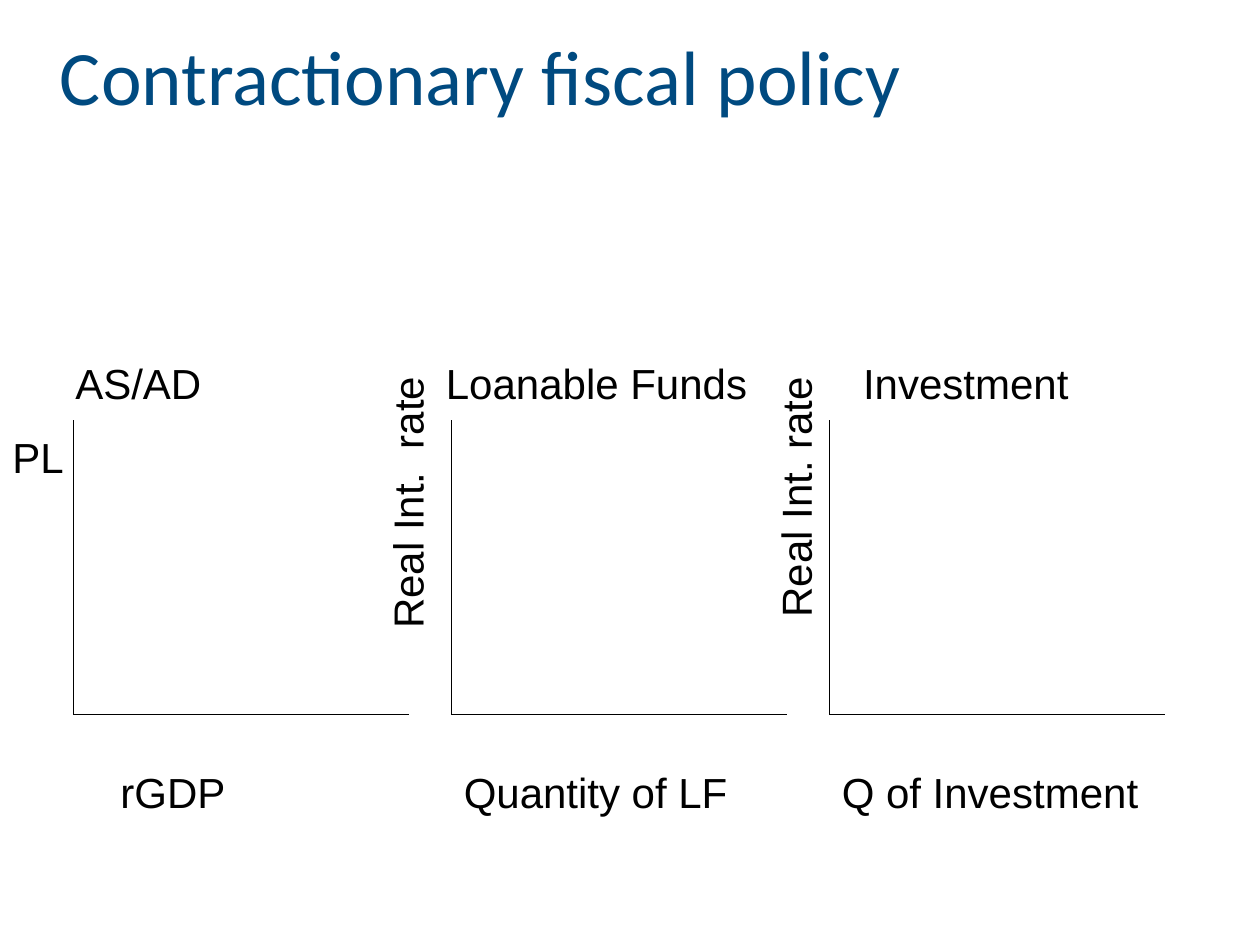
"""Build the contractionary fiscal policy slide with three empty graphs."""
from lxml import etree
from pptx import Presentation
from pptx import util as u
from pptx.dml.color import RGBColor
from pptx.enum import shapes, text
from pptx.oxml import ns

BLUE = RGBColor(0x00, 0x4A, 0x80)
BLACK = RGBColor(0x00, 0x00, 0x00)

prs = Presentation()
prs.slide_width, prs.slide_height = u.Cm(25.4), u.Cm(19.05)
s = prs.slides.add_slide(prs.slide_layouts[6])


def add_label(words, left, top, width, height, tabs=(), rotation=0, inset=0.25,
              name="Arial", size=24, color=BLACK):
    sp = s.shapes.add_textbox(u.Cm(left), u.Cm(top), u.Cm(width), u.Cm(height))
    sp.rotation = rotation
    tf = sp.text_frame
    frame = {"word_wrap": True, "vertical_anchor": text.MSO_ANCHOR.TOP,
             "margin_left": u.Cm(inset), "margin_top": u.Cm(0.22)}
    for key, value in frame.items():
        setattr(tf, key, value)
    p = tf.paragraphs[0]
    r = p.add_run()
    r.text = words
    for key, value in {"name": name, "size": u.Pt(size)}.items():
        setattr(r.font, key, value)
    r.font.color.rgb = color
    if tabs:
        stops = etree.SubElement(p._p.get_or_add_pPr(), ns.qn("a:tabLst"))
        for tab in tabs:
            etree.SubElement(stops, ns.qn("a:tab"), pos=str(u.Cm(tab)), algn="l")


def add_axis(x1, y1, x2, y2):
    sp = s.shapes.add_connector(shapes.MSO_CONNECTOR.STRAIGHT,
                                u.Cm(x1), u.Cm(y1), u.Cm(x2), u.Cm(y2))
    sp.line.color.rgb = BLACK
    sp.line.width = u.Pt(0.75)
    etree.SubElement(sp._element.spPr, ns.qn("a:effectLst"))


add_label("Contractionary fiscal policy", 1.06, 0.36, 22.86, 2.13,
          inset=0.15, name="Calibri", size=44, color=BLUE)

top, bottom, axis_width = 8.47, 14.4, 6.77
for i in range(3):
    left = 1.48 + i * 7.62
    add_axis(left, top, left, bottom)
    add_axis(left, bottom, left + axis_width, bottom)

add_label("AS/AD\tLoanable Funds\tInvestment", 1.27, 6.99, 23.28, 1.3,
          tabs=(7.47, 15.88))
add_label("\trGDP\tQuantity of LF\tQ of Investment", 1.48, 15.24, 22.65, 1.3,
          tabs=(0.7, 7.62, 15.24))
add_label("PL", 0, top, 1.7, 1.02)
add_label("Real Int.  rate", 4.95, 9.1, 6.35, 1.3, rotation=270)
add_label("Real Int. rate", 13.2, 9.3, 5.5, 1.3, rotation=270)

prs.save("out.pptx")
